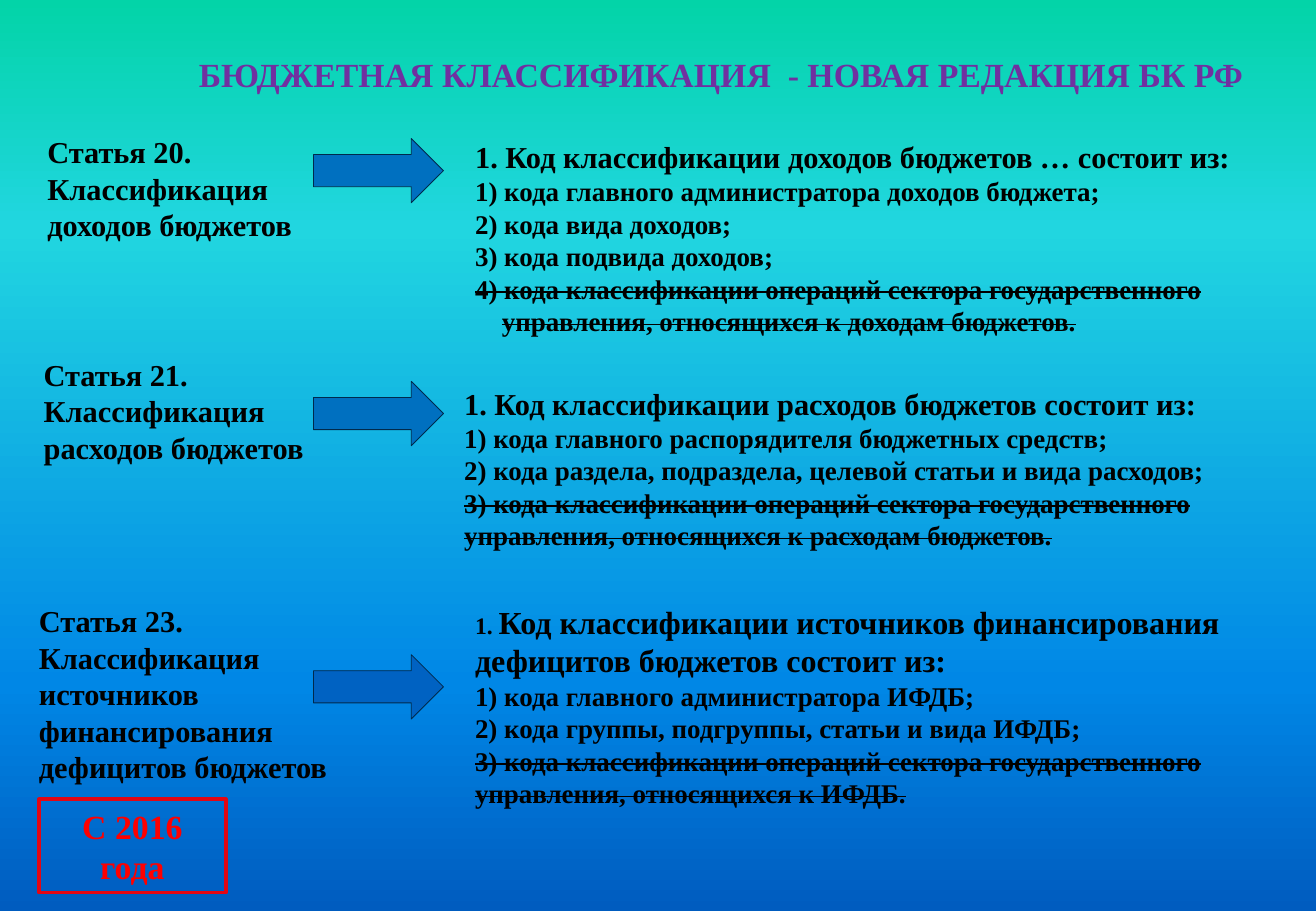
from pptx import Presentation
from pptx.dml.color import RGBColor
from pptx.enum.shapes import MSO_SHAPE as Shape
from pptx.enum.text import MSO_ANCHOR as Anchor, PP_ALIGN as Align
from pptx.oxml import parse_xml
from pptx.oxml.ns import nsdecls
from pptx.util import Inches, Pt

FONT = "Times New Roman"
BLACK, PURPLE, RED = "000000", "7030A0", "FF0000"
BACKGROUND_STOPS = [(0, "03D4A8"), (25, "21D6E0"), (75, "0087E6"), (100, "005CBF")]
ARROW_BOX_LEFT, ARROW_WIDTH, ARROW_HEIGHT = 2.58, 1.07, 0.53
CONTINUATION_INDENT = 0.22

# Each code line: (runs as (text, size), struck out, left indent)
ARTICLES = [
    dict(
        name="Статья 20. Классификация доходов бюджетов",
        name_box=(0.39, 1.1, 2.33, 0.92),
        arrow_top=1.14, arrow_color="0070C0",
        codes_box=(3.91, 1.14, 6.59, 1.45),
        codes=[
            ([("1. Код классификации доходов бюджетов … состоит из:", 18)], False, 0),
            ([("1) кода главного администратора доходов бюджета;", 16)], False, 0),
            ([("2) кода вида доходов;", 16)], False, 0),
            ([("3) кода подвида доходов;", 16)], False, 0),
            ([("4) кода классификации операций сектора государственного", 16)], True, 0),
            ([("управления, относящихся к доходам бюджетов.", 16)], True,
             CONTINUATION_INDENT),
        ],
    ),
    dict(
        name="Статья 21. Классификация расходов бюджетов",
        name_box=(0.36, 2.93, 2.23, 0.92),
        arrow_top=3.14, arrow_color="0070C0",
        codes_box=(3.82, 3.17, 6.83, 1.33),
        codes=[
            ([("1. Код классификации расходов бюджетов состоит из:", 18)], False, 0),
            ([("1) кода главного распорядителя бюджетных средств;", 16)], False, 0),
            ([("2) кода раздела, подраздела, целевой статьи и вида расходов;", 16)],
             False, 0),
            ([("3) кода классификации операций сектора государственного управления, "
               "относящихся к расходам бюджетов.", 16)], True, 0),
        ],
    ),
    dict(
        name="Статья 23. Классификация источников финансирования дефицитов бюджетов",
        name_box=(0.32, 4.96, 2.4, 1.62),
        arrow_top=5.39, arrow_color="0062C2",
        codes_box=(3.91, 4.96, 6.83, 2.29),
        codes=[
            ([("1. ", 14), ("Код классификации источников финансирования "
                            "дефицитов бюджетов состоит из:", 19)], False, 0),
            ([("1) кода главного администратора ИФДБ;", 16)], False, 0),
            ([("2) кода группы, подгруппы, статьи и вида ИФДБ;", 16)], False, 0),
            ([("3) кода классификации операций сектора государственного управления, "
               "относящихся к ИФДБ.", 16)], True, 0),
        ],
    ),
]


def rgb(color):
    return RGBColor.from_string(color)


def add_run(paragraph, text, size, color=BLACK, struck=False):
    run = paragraph.add_run()
    run.text = text
    font = run.font
    font.name, font.size, font.bold = FONT, Pt(size), True
    font.color.rgb = rgb(color)
    if struck:
        run._r.get_or_add_rPr().set("strike", "sngStrike")


def add_text_frame(slide, box):
    """Add a wrapping text box without margins and return its frame."""
    frame = slide.shapes.add_textbox(*map(Inches, box)).text_frame
    frame.word_wrap = True
    frame.margin_left = frame.margin_right = frame.margin_top = frame.margin_bottom = 0
    return frame


def add_shape(slide, kind, box, line_color, line_width):
    shape = slide.shapes.add_shape(kind, *map(Inches, box))
    shape.shadow.inherit = False
    shape.line.color.rgb = rgb(line_color)
    shape.line.width = Pt(line_width)
    return shape


def paint_background(slide):
    stops = "".join(
        f'<a:gs pos="{position * 1000}"><a:srgbClr val="{color}"/></a:gs>'
        for position, color in BACKGROUND_STOPS)
    slide.element.cSld.insert(0, parse_xml(
        f'<p:bg {nsdecls("p", "a")}><p:bgPr><a:gradFill rotWithShape="1">'
        f'<a:gsLst>{stops}</a:gsLst><a:lin ang="5400000" scaled="0"/></a:gradFill>'
        '<a:effectLst/></p:bgPr></p:bg>'))


def add_title(slide, box):
    paragraph = add_text_frame(slide, box).paragraphs[0]
    paragraph.alignment = Align.CENTER
    add_run(paragraph, "БЮДЖЕТНАЯ КЛАССИФИКАЦИЯ  - НОВАЯ РЕДАКЦИЯ БК РФ", 20, PURPLE)


def add_codes(slide, box, codes):
    frame = add_text_frame(slide, box)
    for index, (runs, struck, indent) in enumerate(codes):
        paragraph = frame.add_paragraph() if index else frame.paragraphs[0]
        if indent:
            paragraph._p.get_or_add_pPr().set("marL", str(Inches(indent)))
        for text, size in runs:
            add_run(paragraph, text, size, struck=struck)


def add_article(slide, article):
    """Add an article's name, its arrow and the codes it leads to."""
    name = add_text_frame(slide, article["name_box"]).paragraphs[0]
    add_run(name, article["name"], 18)
    arrow_box = (ARROW_BOX_LEFT, article["arrow_top"], ARROW_WIDTH, ARROW_HEIGHT)
    arrow = add_shape(slide, Shape.RIGHT_ARROW, arrow_box, "002A4C", 0.5)
    arrow.fill.solid()
    arrow.fill.fore_color.rgb = rgb(article["arrow_color"])
    add_codes(slide, article["codes_box"], article["codes"])


def add_start_year(slide, box):
    frame_box = add_shape(slide, Shape.RECTANGLE, box, "E30613", 2)
    frame_box.fill.background()
    frame = frame_box.text_frame
    frame.word_wrap = True
    frame.vertical_anchor = Anchor.MIDDLE
    paragraph = frame.paragraphs[0]
    paragraph.alignment = Align.CENTER
    add_run(paragraph, "С 2016 года", 20, RED)


def main():
    deck = Presentation()
    deck.slide_width, deck.slide_height = Inches(10.83), Inches(7.5)
    slide = deck.slides.add_slide(deck.slide_layouts[6])
    paint_background(slide)
    add_title(slide, (1.58, 0.44, 8.71, 0.56))
    for article in ARTICLES:
        add_article(slide, article)
    add_start_year(slide, (0.32, 6.58, 1.54, 0.77))
    deck.save("out.pptx")


if __name__ == "__main__":
    main()
